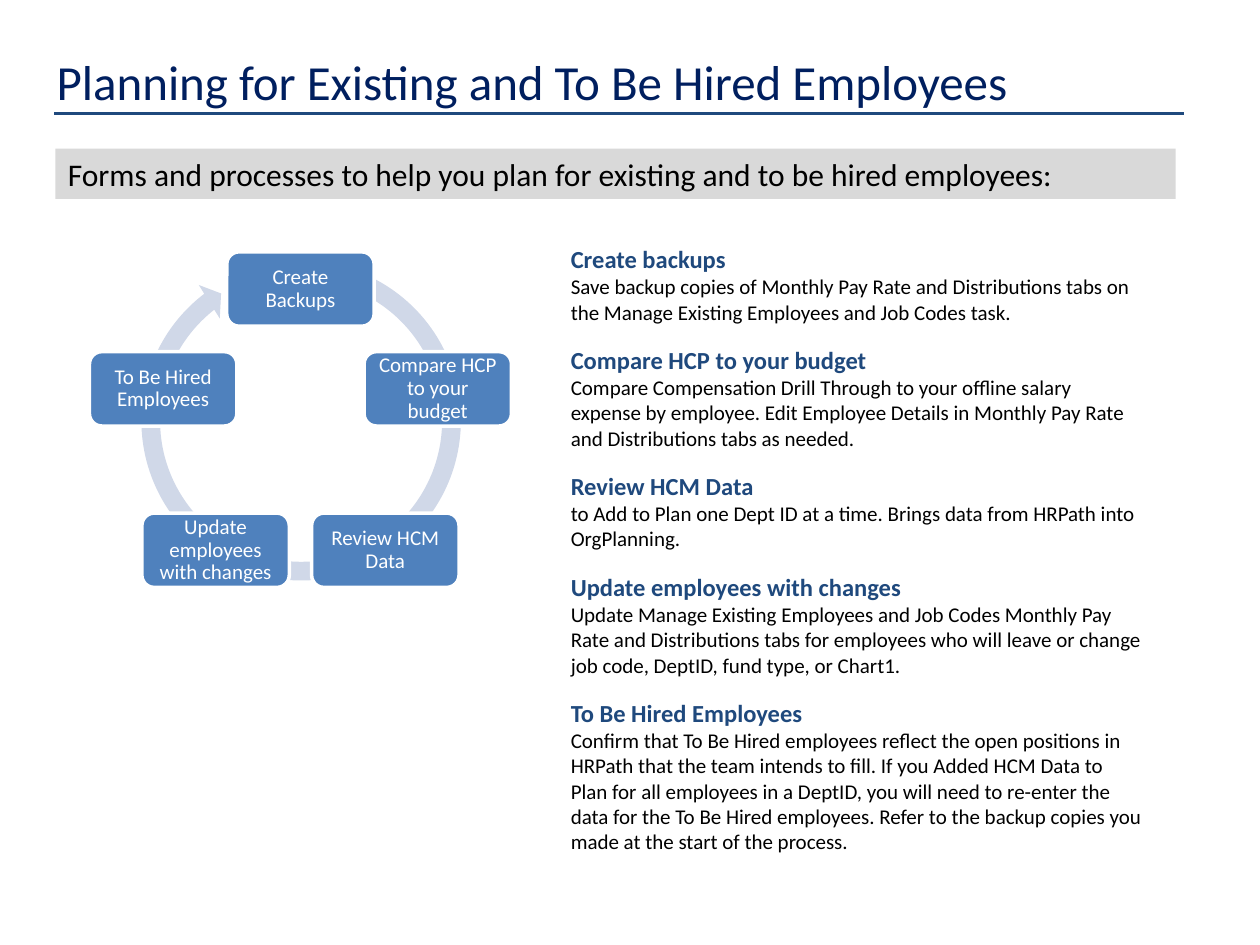
from math import cos, pi, sin

from lxml.etree import SubElement
from pptx import Presentation
from pptx.dml.color import RGBColor
from pptx.enum.shapes import MSO_CONNECTOR, MSO_SHAPE
from pptx.enum.text import MSO_ANCHOR, MSO_AUTO_SIZE, PP_ALIGN
from pptx.oxml.ns import qn
from pptx.util import Inches, Pt

NAVY = RGBColor(0x00, 0x1F, 0x5F)
BLUE = RGBColor(0x1F, 0x49, 0x7D)
NODE_BLUE = RGBColor(0x4F, 0x81, 0xBD)
PALE_BLUE = RGBColor(0xD0, 0xD8, 0xE8)
GREY = RGBColor(0xD9, 0xD9, 0xD9)
BLACK = RGBColor(0x00, 0x00, 0x00)
WHITE = RGBColor(0xFF, 0xFF, 0xFF)

FONT = "Calibri"
COLUMNS, ROWS = 100, 75
SLIDE_WIDTH, SLIDE_HEIGHT = Inches(10), Inches(7.5)

# Cycle geometry in grid units
CYCLE_X, CYCLE_Y, CYCLE_RADIUS = 23.85, 34.4, 11.46
NODE_WIDTH, NODE_HEIGHT = 11.7, 5.9

CYCLE_STEPS = [
    "Create Backups",
    "Compare HCP to your budget",
    "Review HCM Data",
    "Update employees with changes",
    "To Be Hired Employees",
]

DESCRIPTIONS = [
    ("Create backups",
     "Save backup copies of Monthly Pay Rate and Distributions tabs on the "
     "Manage Existing Employees and Job Codes task."),
    ("Compare HCP to your budget",
     "Compare Compensation Drill Through to your offline salary expense by "
     "employee. Edit Employee Details in Monthly Pay Rate and Distributions "
     "tabs as needed."),
    ("Review HCM Data",
     "to Add to Plan one Dept ID at a time. Brings data from HRPath into "
     "OrgPlanning."),
    ("Update employees with changes",
     "Update Manage Existing Employees and Job Codes Monthly Pay Rate and "
     "Distributions tabs for employees who will leave or change job code, "
     "DeptID, fund type, or Chart1."),
    ("To Be Hired Employees",
     "Confirm that To Be Hired employees reflect the open positions in HRPath "
     "that the team intends to fill. If you Added HCM Data to Plan for all "
     "employees in a DeptID, you will need to re-enter the data for the To Be "
     "Hired employees. Refer to the backup copies you made at the start of "
     "the process."),
]


def grid(column, row):
    return int(SLIDE_WIDTH * column / COLUMNS), int(SLIDE_HEIGHT * row / ROWS)


def move(placeholder, column, row, width, height):
    placeholder.left, placeholder.top = grid(column, row)
    placeholder.width, placeholder.height = grid(width, height)


def write(paragraph, text, size, color, bold=False, align=PP_ALIGN.LEFT):
    paragraph.text = text
    paragraph.alignment = align
    font = paragraph.runs[0].font
    font.name, font.size, font.bold = FONT, Pt(size), bold
    font.color.rgb = color


def add_block(slide, preset, fill, column, row, width, height):
    block = slide.shapes.add_shape(
        preset, *grid(column, row), *grid(width, height))
    block.shadow.inherit = False
    block.fill.solid()
    block.fill.fore_color.rgb = fill
    block.line.fill.background()
    return block


def add_title(slide):
    title = slide.shapes.title
    move(title, 4.4, 4, 89.6, 4.9)
    frame = title.text_frame
    frame.margin_left = frame.margin_right = frame.margin_bottom = 0
    frame.margin_top = Inches(0.01)
    frame.vertical_anchor = MSO_ANCHOR.TOP
    frame.auto_size = MSO_AUTO_SIZE.SHAPE_TO_FIT_TEXT
    heading = frame.paragraphs[0]
    write(heading, "Planning for Existing and To Be Hired Employees", 28, NAVY)
    heading.space_before = Pt(1)
    heading._p.get_or_add_pPr().set("marL", str(Inches(0.01)))

    # Rule under the title
    rule = slide.shapes.add_connector(
        MSO_CONNECTOR.STRAIGHT, *grid(4.3, 9), *grid(94, 9))
    rule.line.color.rgb = BLUE
    rule.line.width = Pt(1.75)
    SubElement(rule._element.spPr, qn("a:effectLst"))


def add_banner(slide):
    banner = add_block(slide, MSO_SHAPE.RECTANGLE, GREY, 4.4, 11.8, 88.9, 4)
    write(banner.text_frame.paragraphs[0],
          "Forms and processes to help you plan for existing and to be hired "
          "employees:", 18, BLACK)


def add_descriptions(slide):
    body = slide.placeholders[1]
    move(body, 44.2, 18.9, 47.5, 51.1)
    frame = body.text_frame
    frame.auto_size = MSO_AUTO_SIZE.SHAPE_TO_FIT_TEXT
    lines = [line for pair in DESCRIPTIONS for line in pair]
    for index, line in enumerate(lines):
        paragraph = frame.add_paragraph() if index else frame.paragraphs[0]
        is_heading = index % 2 == 0
        if is_heading:
            write(paragraph, line, 14, BLUE, bold=True)
        else:
            write(paragraph, line, 12, BLACK)
        paragraph.space_before = Pt(6 if is_heading and index else 0)
        paragraph.space_after = Pt(0 if is_heading else 6)
        properties = paragraph._p.get_or_add_pPr()
        properties.set("marL", str(Inches(0.01)))
        properties.set("indent", "0")
        SubElement(properties, qn("a:buNone"))


def add_node(slide, label, center_x, center_y):
    node = add_block(slide, MSO_SHAPE.ROUNDED_RECTANGLE, NODE_BLUE,
                     center_x - NODE_WIDTH / 2, center_y - NODE_HEIGHT / 2,
                     NODE_WIDTH, NODE_HEIGHT)
    node.line.color.rgb = WHITE
    node.line.width = Pt(2)
    frame = node.text_frame
    frame.margin_left = frame.margin_right = Inches(0.08)
    frame.margin_top = frame.margin_bottom = Inches(0.08)
    frame.vertical_anchor = MSO_ANCHOR.MIDDLE
    paragraph = frame.paragraphs[0]
    write(paragraph, label, 12, WHITE, align=PP_ALIGN.CENTER)
    paragraph.line_spacing = 0.9


def add_cycle(slide):
    # Ring with its arrowhead before the first step
    ring = add_block(slide, MSO_SHAPE.CIRCULAR_ARROW, PALE_BLUE,
                     10.4, 19.9, 27, 27)
    for index, value in enumerate((0.055, 3.307, 139.414, 172.86, 0.058)):
        ring.adjustments[index] = value

    # Steps at equal angles, clockwise from the top
    for index, label in enumerate(CYCLE_STEPS):
        angle = 2 * pi * index / len(CYCLE_STEPS)
        add_node(slide, label, CYCLE_X + CYCLE_RADIUS * sin(angle),
                 CYCLE_Y - CYCLE_RADIUS * cos(angle))


def main():
    presentation = Presentation()
    presentation.slide_width = SLIDE_WIDTH
    presentation.slide_height = SLIDE_HEIGHT
    slide = presentation.slides.add_slide(presentation.slide_layouts[1])
    add_title(slide)
    add_descriptions(slide)
    add_cycle(slide)
    add_banner(slide)
    presentation.save("out.pptx")


if __name__ == "__main__":
    main()
